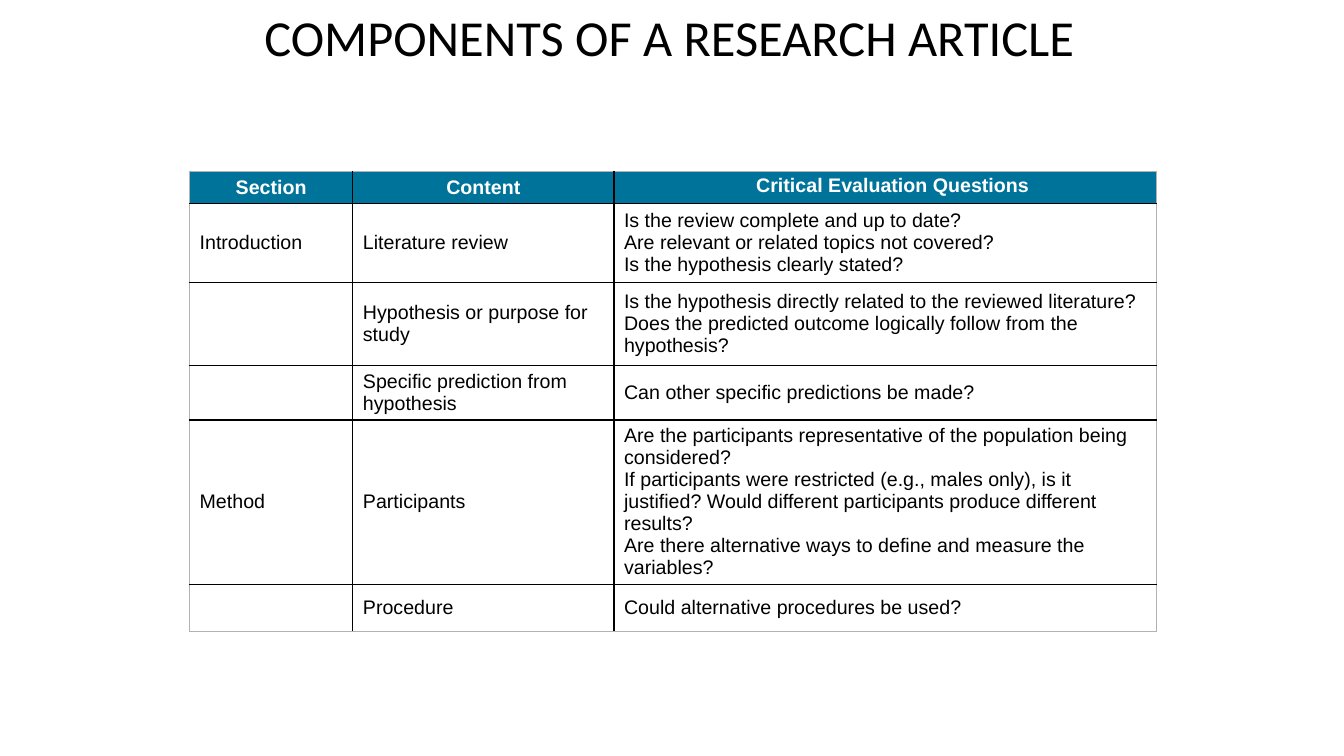
from dataclasses import dataclass

from lxml import etree
from pptx import Presentation
from pptx import util as u
from pptx.dml.color import RGBColor
from pptx.enum import text as t
from pptx.oxml.ns import qn

BLACK, WHITE, TEAL, GREY = "000000", "FFFFFF", "00739B", "B2B2B2"


@dataclass
class ArticleRow:
    height: float
    section: str
    content: str
    questions: list[str]


COLUMN_WIDTHS = [1.62, 2.59, 5.38]
HEADINGS = ["Section", "Content", "Critical Evaluation Questions"]
HEADING_HEIGHT = 0.24
ARTICLE_ROWS = [
    ArticleRow(0.78, "Introduction", "Literature review", [
        "Is the review complete and up to date?",
        "Are relevant or related topics not covered?",
        "Is the hypothesis clearly stated?",
    ]),
    ArticleRow(0.83, "", "Hypothesis or purpose for study", [
        "Is the hypothesis directly related to the reviewed literature?",
        "Does the predicted outcome logically follow from the hypothesis?",
    ]),
    ArticleRow(0.47, "", "Specific prediction from hypothesis", [
        "Can other specific predictions be made?",
    ]),
    ArticleRow(1.47, "Method", "Participants", [
        "Are the participants representative of the population being considered?",
        "If participants were restricted (e.g., males only), is it justified? "
        "Would different participants produce different results?",
        "Are there alternative ways to define and measure the variables?",
    ]),
    ArticleRow(0.47, "", "Procedure", ["Could alternative procedures be used?"]),
]


def rgb(color: str) -> RGBColor:
    return RGBColor.from_string(color)


def write(frame, lines: list[str], *, size: float = 14, font: str = "Arial",
          color: str = BLACK, bold: bool = False, align=t.PP_ALIGN.LEFT,
          line_spacing: float = 1.0, space_after: float = 0) -> None:
    """Fill a text frame with one paragraph per line."""
    frame.word_wrap = True
    for index, line in enumerate(lines):
        paragraph = frame.add_paragraph() if index else frame.paragraphs[0]
        paragraph.alignment = align
        paragraph.line_spacing = line_spacing
        paragraph.space_before = u.Pt(0)
        paragraph.space_after = u.Pt(space_after)
        paragraph.font.size = u.Pt(size)
        if line:
            run = paragraph.add_run()
            run.text = line
            run.font.size = u.Pt(size)
            run.font.name = font
            run.font.bold = bold
            run.font.color.rgb = rgb(color)


def set_borders(cell, colors: dict[str, str]) -> None:
    """Draw 1 pt cell borders, keyed by side in schema order."""
    properties = cell._tc.get_or_add_tcPr()
    for side, color in colors.items():
        line = etree.SubElement(properties, qn(f"a:ln{side}"), w=str(u.Pt(1)))
        fill = etree.SubElement(line, qn("a:solidFill"))
        etree.SubElement(fill, qn("a:srgbClr"), val=color)


def add_title(slide) -> None:
    title = slide.shapes.title
    title.left, title.top = u.Inches(1.76), u.Inches(0.08)
    title.width, title.height = u.Inches(9.76), u.Inches(1.46)
    title.text_frame.vertical_anchor = t.MSO_ANCHOR.TOP
    write(title.text_frame, ["COMPONENTS OF A RESEARCH ARTICLE"], size=36,
          font="Calibri", align=t.PP_ALIGN.CENTER, line_spacing=0.9)


def add_components_table(slide) -> None:
    heights = [HEADING_HEIGHT] + [row.height for row in ARTICLE_ROWS]
    contents = [[[heading] for heading in HEADINGS]]
    contents += [[[row.section], [row.content], row.questions] for row in ARTICLE_ROWS]
    last_row, last_column = len(heights) - 1, len(COLUMN_WIDTHS) - 1

    components = slide.shapes.add_table(
        len(heights), len(COLUMN_WIDTHS), u.Inches(1.88), u.Inches(1.7),
        u.Inches(sum(COLUMN_WIDTHS)), u.Inches(sum(heights))).table
    components.first_row = components.horz_banding = False
    for column, width in zip(components.columns, COLUMN_WIDTHS):
        column.width = u.Inches(width)

    for r, height in enumerate(heights):
        components.rows[r].height = u.Inches(height)
        for c, lines in enumerate(contents[r]):
            cell = components.cell(r, c)
            cell.vertical_anchor = t.MSO_ANCHOR.MIDDLE
            # Grey outer frame, black inner grid
            set_borders(cell, {
                "L": GREY if c == 0 else BLACK,
                "R": GREY if c == last_column else BLACK,
                "T": GREY if r == 0 else BLACK,
                "B": GREY if r == last_row else BLACK,
            })
            if r > 0:
                cell.fill.background()
                write(cell.text_frame, lines)
                continue
            # Heading row
            cell.fill.solid()
            cell.fill.fore_color.rgb = rgb(TEAL)
            spacing = {}
            if c == last_column:
                cell.margin_left = u.Inches(0.15)
                cell.margin_right = cell.margin_top = cell.margin_bottom = 0
                spacing = {"line_spacing": 0.82, "space_after": 5.4}
            write(cell.text_frame, lines, color=WHITE, bold=True,
                  align=t.PP_ALIGN.CENTER, **spacing)


def main() -> None:
    deck = Presentation()
    deck.slide_width, deck.slide_height = u.Inches(13.33), u.Inches(7.5)
    slide = deck.slides.add_slide(deck.slide_layouts[5])
    slide.background.fill.solid()
    slide.background.fill.fore_color.rgb = rgb(WHITE)
    add_title(slide)
    add_components_table(slide)
    deck.save("out.pptx")


if __name__ == "__main__":
    main()
